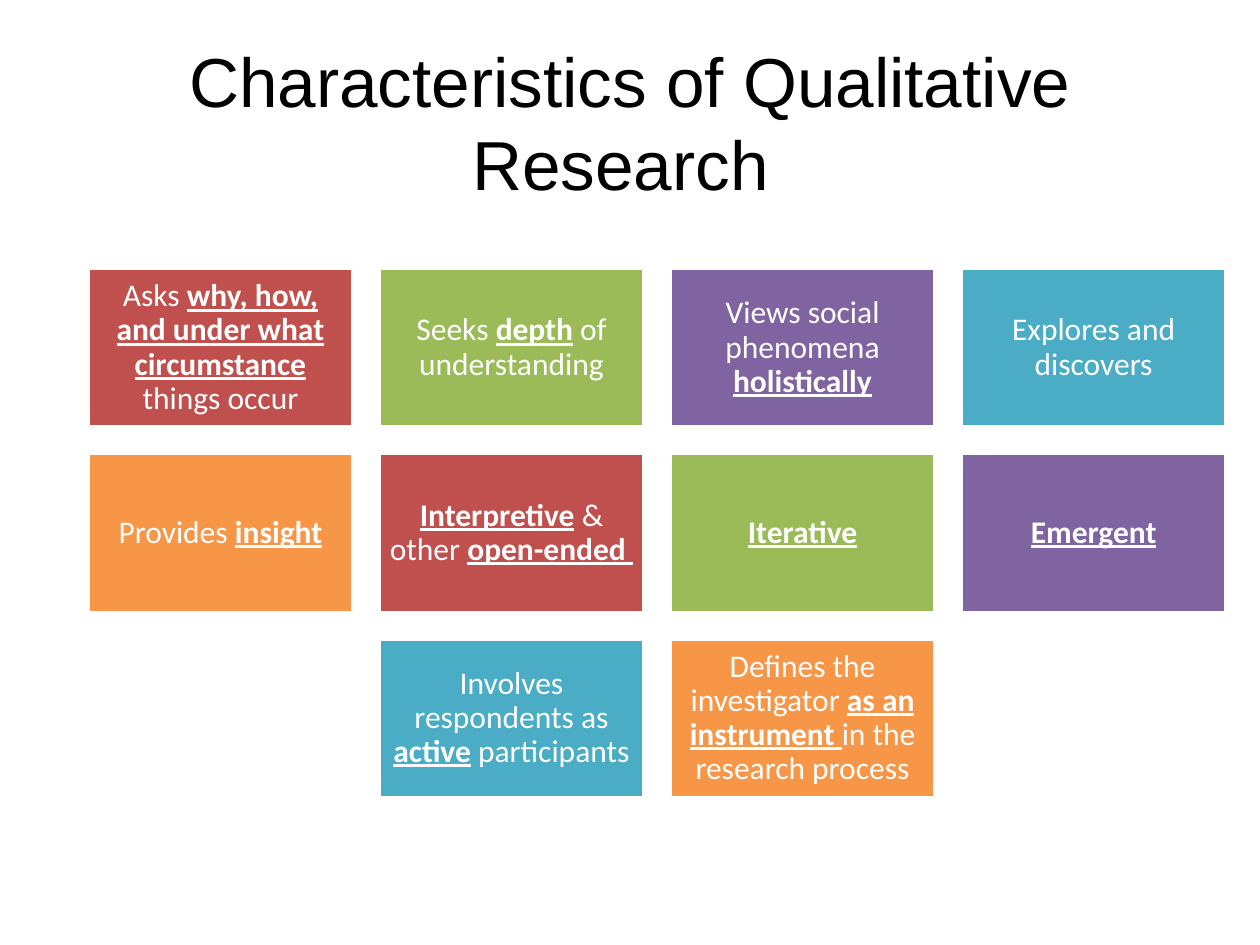
import pptx
import pptx.util
import pptx.dml.color
import pptx.enum.shapes
import pptx.enum.text

Pt = pptx.util.Pt
RGB = pptx.dml.color.RGBColor.from_string
CENTER = pptx.enum.text.PP_ALIGN.CENTER
MIDDLE = pptx.enum.text.MSO_ANCHOR.MIDDLE

THEME = {
    "black": "000000",
    "white": "FFFFFF",
    "fills": ["C0504D", "9BBB59", "8064A2", "4BACC6", "F79646"],
    "title": {"name": "Arial", "size": Pt(39.6)},
    "body": {"name": "Calibri", "size": Pt(18)},
    "key": {"bold": True, "underline": True},
}

# Each card is a list of runs; a run in a tuple is a key term
ROWS = [
    [
        ["Asks ", ("why, how, and under what circumstance ",), "things occur"],
        ["Seeks ", ("depth",), " of understanding"],
        ["Views social phenomena ", ("holistically",)],
        ["Explores and discovers"],
    ],
    [
        ["Provides ", ("insight",)],
        [("Interpretive",), " & other ", ("open-ended ",)],
        [("Iterative",)],
        [("Emergent",)],
    ],
    [
        ["Involves respondents as ", ("active",), " participants"],
        ["Defines the investigator ", ("as an instrument ",),
         "in the research process"],
    ],
]

# Card grid, in points
LEFT, TOP, WIDE, HIGH, GAP = 50.4, 153.4, 151.2, 90.7, 15.12


def apply(item, values):
    for name, value in values.items():
        setattr(item, name, value)


class Deck:
    def __init__(self, theme):
        self.theme = theme
        self.file = pptx.Presentation()
        apply(self.file, {"slide_width": Pt(720), "slide_height": Pt(540)})
        self.slide = self.file.slides.add_slide(self.file.slide_layouts[5])

    def frame(self, shape, inset):
        frame = shape.text_frame
        sides = ("left", "top", "right", "bottom")
        apply(frame, {f"margin_{side}": Pt(inset) for side in sides})
        apply(frame, {"word_wrap": True, "vertical_anchor": MIDDLE})
        frame.paragraphs[0].alignment = CENTER
        return frame.paragraphs[0]

    def run(self, para, text, style, color):
        run = para.add_run()
        run.text = text
        apply(run.font, style)
        run.font.color.rgb = RGB(self.theme[color])

    def title(self, text):
        shape = self.slide.shapes.title
        apply(shape, {"left": Pt(50.4), "top": Pt(25.2),
                      "width": Pt(619.2), "height": Pt(87.8)})
        para = self.frame(shape, 3.6)
        self.run(para, text, self.theme["title"], "black")

    def card(self, left, top, fill, parts):
        shape = self.slide.shapes.add_shape(
            pptx.enum.shapes.MSO_SHAPE.RECTANGLE,
            Pt(left), Pt(top), Pt(WIDE), Pt(HIGH))
        shape.shadow.inherit = False
        shape.fill.solid()
        shape.fill.fore_color.rgb = RGB(fill)
        shape.line.color.rgb = RGB(self.theme["white"])
        shape.line.width = Pt(2)
        para = self.frame(shape, 5)
        para.line_spacing = 0.9
        for part in parts:
            style = dict(self.theme["body"])
            if isinstance(part, tuple):
                style.update(self.theme["key"])
                part = part[0]
            self.run(para, part, style, "white")


def main():
    deck = Deck(THEME)
    deck.title("Characteristics of Qualitative Research ")

    # Cards: short rows are centred, fills cycle in reading order
    fills = THEME["fills"]
    count = 0
    for row, cards in enumerate(ROWS):
        shift = (len(ROWS[0]) - len(cards)) / 2
        for col, parts in enumerate(cards):
            left = LEFT + (col + shift) * (WIDE + GAP)
            top = TOP + row * (HIGH + GAP)
            deck.card(left, top, fills[count % len(fills)], parts)
            count += 1

    deck.file.save("out.pptx")


if __name__ == "__main__":
    main()
